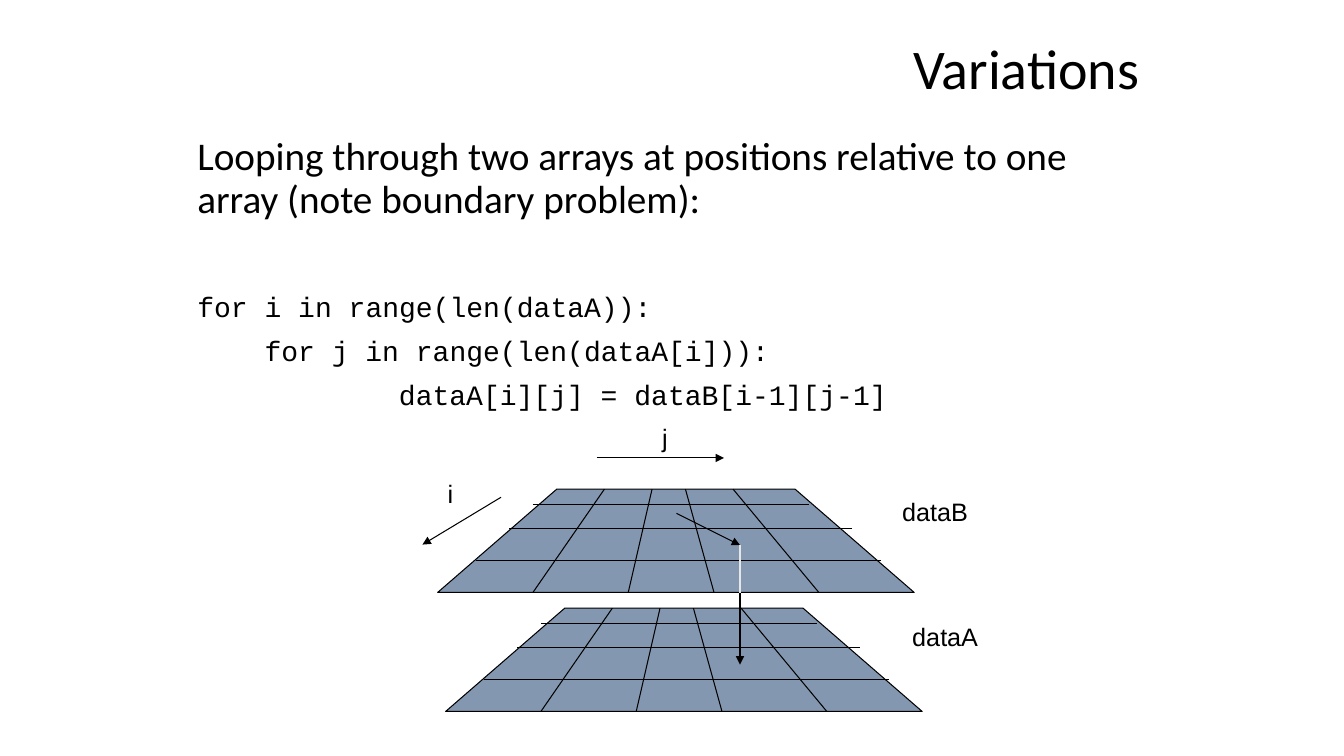
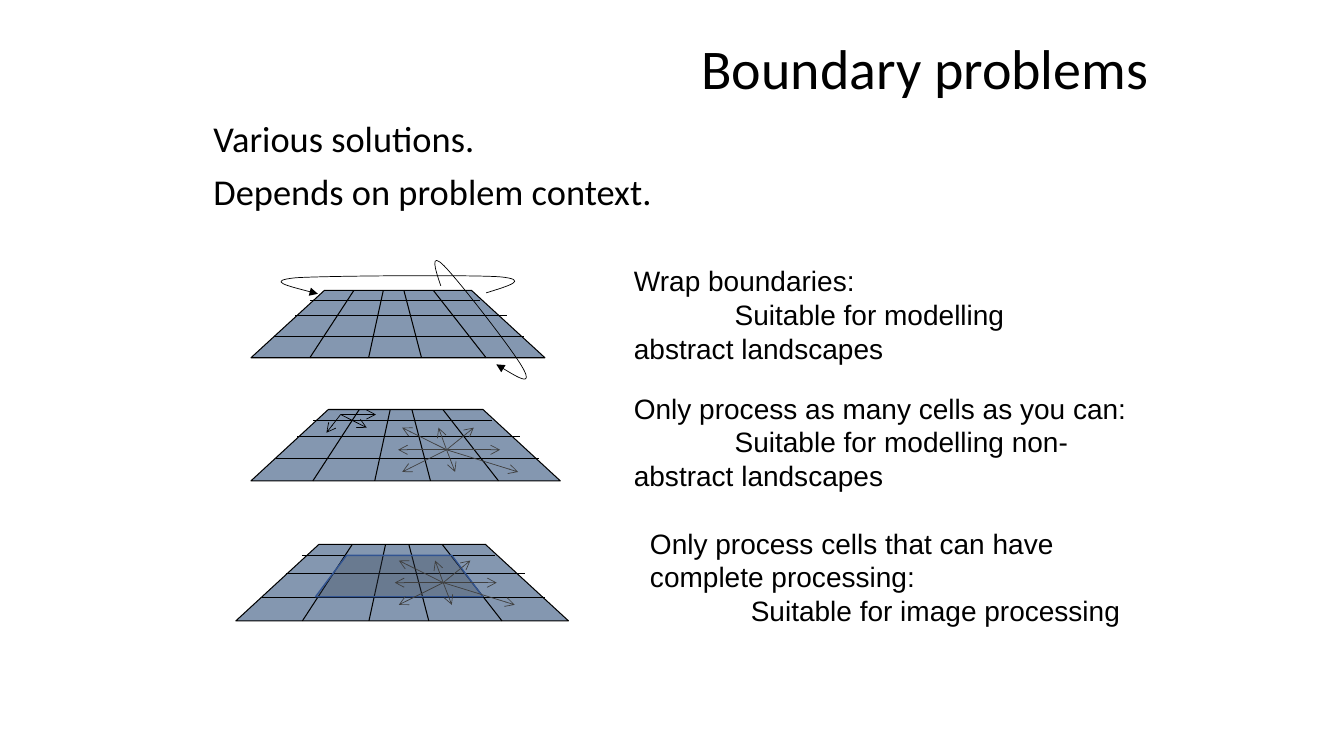
from lxml import etree
from pptx import Presentation
from pptx.dml.color import RGBColor
from pptx.enum import shapes, text
from pptx.oxml import ns
from pptx.util import Pt

BLACK, GREY, PALE = "000000", "404040", "E7E6E6"
GRID_FILL, CORE_FILL, CORE_LINE = "8497B0", "333F50", "325491"
HEADING, LABEL, CODE = "Calibri", "Arial", "Courier New"

# Fractions of the grid box
GRID_OUTLINE = [(0, 1), (0.25, 0), (0.75, 0), (1, 1)]
GRID_COLUMNS = [(0.2, 0.35), (0.4, 0.45), (0.58, 0.52), (0.8, 0.62)]
GRID_ROWS = [(0.15, 0.2, 0.78), (0.38, 0.15, 0.87), (0.69, 0.08, 0.93)]

# Offsets in points
NEIGHBOURS = [(-5.8, -15.8), (-31.7, -15.8), (-34.6, 0), (-31.7, 15.8),
              (6.1, 15.8), (19.4, -15.8), (38.2, 0), (51.1, 15.8)]
CORNER_NEIGHBOURS = [(-10.1, 13), (25.2, 0), (18.7, 9.4)]
WRAP_SIDEWAYS = [(168, 1.8), (183.9, -3.2), (199.7, -7.6), (177.4, -9.7),
                 (154.4, -11.2), (53.6, -10.4), (32, -9),
                 (10.4, -6.8), (29.1, -2.5), (47.8, 2.5)]
WRAP_DOWN = [(135.6, -3.2), (131.3, -15.5), (127.7, -27.7), (137.8, -17.6),
             (147.9, -7.6), (188.9, 45), (194.7, 56.5),
             (201.2, 68.8), (188.2, 60.8), (175.2, 52.9)]


def rgb(value):
    return RGBColor.from_string(value)


def add_child(parent, tag, **attributes):
    return etree.SubElement(parent, ns.qn(tag), attributes)


def set_line(shape, color=BLACK, width=0.75, tail=None):
    shape.line.color.rgb = rgb(color)
    shape.line.width = Pt(width)
    if tail:
        add_child(shape.line._get_or_add_ln(), "a:tailEnd", type=tail)


def add_line(slide, start, end, **line):
    connector = slide.shapes.add_connector(
        shapes.MSO_CONNECTOR.STRAIGHT, *map(Pt, (*start, *end)))
    set_line(connector, **line)
    add_child(connector._element.spPr, "a:effectLst")


def add_outline(slide, points, fill=None, closed=True, **line):
    corners = [(Pt(x), Pt(y)) for x, y in points]
    builder = slide.shapes.build_freeform(*corners[0])
    builder.add_line_segments(corners[1:], close=closed)
    outline = builder.convert_to_shape()
    outline.shadow.inherit = False
    if fill:
        outline.fill.solid()
        outline.fill.fore_color.rgb = rgb(fill)
    else:
        outline.fill.background()
    set_line(outline, **line)
    return outline


def add_curve(slide, points, **line):
    """Draw a Bezier curve: a start, then two controls and an end per segment."""
    curve = add_outline(slide, points, closed=False, **line)
    segments = curve._element.findall(".//" + ns.qn("a:lnTo"))
    for i in range(0, len(segments), 3):
        bezier = etree.Element(ns.qn("a:cubicBezTo"))
        segments[i].addprevious(bezier)
        for segment in segments[i:i + 3]:
            bezier.append(segment[0])
            segment.getparent().remove(segment)


def add_text(slide, box, paragraphs, size=18, font=LABEL, color=BLACK, wrap=True,
             align=text.PP_ALIGN.LEFT, anchor=text.MSO_ANCHOR.TOP,
             spacing=None, before=0):
    """Write paragraphs, each a string or a (string, overrides) pair."""
    frame = slide.shapes.add_textbox(*map(Pt, box)).text_frame
    frame.word_wrap = wrap
    frame.vertical_anchor = anchor
    for i, item in enumerate(paragraphs):
        words, own = (item, {}) if isinstance(item, str) else item
        paragraph = frame.add_paragraph() if i else frame.paragraphs[0]
        paragraph.alignment = align
        paragraph.space_before = Pt(own.get("before", before))
        if spacing:
            paragraph.line_spacing = spacing
        if "indent" in own:
            paragraph._p.get_or_add_pPr().set("indent", str(Pt(own["indent"])))
        run = paragraph.add_run()
        run.text = words
        run.font.size = Pt(own.get("size", size))
        run.font.name = own.get("font", font)
        run.font.color.rgb = rgb(color)


def add_title(slide, title, right):
    add_text(slide, (right - 650, 20.2, 650, 61.2), [title], size=40, font=HEADING,
             align=text.PP_ALIGN.RIGHT, anchor=text.MSO_ANCHOR.MIDDLE, spacing=0.9)


def add_body(slide, box, paragraphs, size):
    add_text(slide, box, paragraphs, size=size, font=HEADING, spacing=0.9, before=10)


def add_grid(slide, left, top, width, height):
    def at(x, y):
        return left + x * width, top + y * height

    add_outline(slide, [at(*corner) for corner in GRID_OUTLINE], fill=GRID_FILL)
    for bottom_x, top_x in GRID_COLUMNS:
        add_line(slide, at(bottom_x, 1), at(top_x, 0))
    for y, start_x, end_x in GRID_ROWS:
        add_line(slide, at(start_x, y), at(end_x, y))


def add_fan(slide, x, y, offsets, color):
    """Draw arrows from one cell to its neighbours."""
    for dx, dy in offsets:
        add_line(slide, (x, y), (x + dx, y + dy), color=color, width=0.5, tail="arrow")


def add_core(slide, left, top, width, height):
    """Shade the cells whose neighbours all exist."""
    core = slide.shapes.add_shape(
        shapes.MSO_SHAPE.TRAPEZOID, *map(Pt, (left, top, width, height)))
    core.adjustments[0] = 0.75
    core.shadow.inherit = False
    core.fill.solid()
    core.fill.fore_color.rgb = rgb(CORE_FILL)
    fill_color = core._element.spPr.find(ns.qn("a:solidFill"))[0]
    add_child(fill_color, "a:alpha", val="33000")
    set_line(core, color=CORE_LINE, width=1)


def add_stacked_arrays(slide, left, top):
    def at(x, y):
        return left + x, top + y

    for corner in (at(0, 0), at(5.7, 85)):
        add_grid(slide, *corner, 340.4, 73.8)
    for start, end in (((113.7, -22.3), (204.5, -22.3)),
                       ((45.3, 5.8), (-10.8, 39.6)),
                       ((216, 74.2), (216, 125.3)),
                       ((170.6, 17.3), (216, 40))):
        add_line(slide, at(*start), at(*end), tail="triangle")
    add_line(slide, at(216, 74.2), at(216, 40), color=PALE)
    for label, x, y, width in (("j", 153.3, -51.1, 18.7), ("i", 0, -11.5, 18.7),
                               ("dataB", 324.7, 1.4, 62), ("dataA", 331.9, 90.7, 62)):
        add_text(slide, (*at(x, y), width, 28.8), [label], wrap=False)


def add_wrapped_grid(slide, left, top):
    add_grid(slide, left, top, 210, 48.2)
    for curve in (WRAP_SIDEWAYS, WRAP_DOWN):
        add_curve(slide, [(left + x, top + y) for x, y in curve],
                  width=0.5, tail="triangle")


def add_partial_grid(slide, left, top):
    add_grid(slide, left, top, 221, 51)
    add_fan(slide, left + 64, top + 3.6, CORNER_NEIGHBOURS, BLACK)
    add_fan(slide, left + 139.7, top + 28.8, NEIGHBOURS, GREY)


def add_core_grid(slide, left, top):
    add_grid(slide, left, top, 237.6, 54.7)
    add_core(slide, left + 56.9, top + 7.9, 119.5, 29.5)
    add_fan(slide, left + 148.1, top + 27.4, NEIGHBOURS, GREY)


def build_variations(slide):
    add_title(slide, "Variations", 820.8)
    code = {"size": 20, "font": CODE}
    add_body(slide, (133.9, 94.3, 692, 430.6), [
        "Looping through two arrays at positions relative to one "
        "array (note boundary problem):",
        ("for i in range(len(dataA)):", {**code, "before": 50.8}),
        ("for j in range(len(dataA[i])):", {**code, "indent": 48}),
        ("dataA[i][j] = dataB[i-1][j-1]", {**code, "indent": 144}),
    ], size=28)
    add_stacked_arrays(slide, 312.6, 349.4)


def build_boundaries(slide):
    add_title(slide, "Boundary problems", 827.3)
    add_body(slide, (145.4, 82.8, 334.8, 79.2),
             ["Various solutions.", "Depends on problem context."], size=26)
    add_wrapped_grid(slide, 179.3, 207.4)
    add_partial_grid(slide, 179.3, 292.5)
    add_core_grid(slide, 168.5, 388.8)
    for left, top, width, solution, use in (
            (445.7, 185, 351.4, "Wrap boundaries:",
             "Suitable for modelling abstract landscapes"),
            (445.7, 275.8, 371.5, "Only process as many cells as you can:",
             "Suitable for modelling non-abstract landscapes"),
            (457.2, 372.2, 351.4,
             "Only process cells that can have complete processing:",
             "Suitable for image processing")):
        add_text(slide, (left, top, width, 79.9),
                 [solution, (use, {"indent": 72})], size=20)


def main():
    deck = Presentation()
    deck.slide_width, deck.slide_height = Pt(960), Pt(540)
    for build in (build_variations, build_boundaries):
        build(deck.slides.add_slide(deck.slide_layouts[6]))
    deck.save("out.pptx")


if __name__ == "__main__":
    main()
